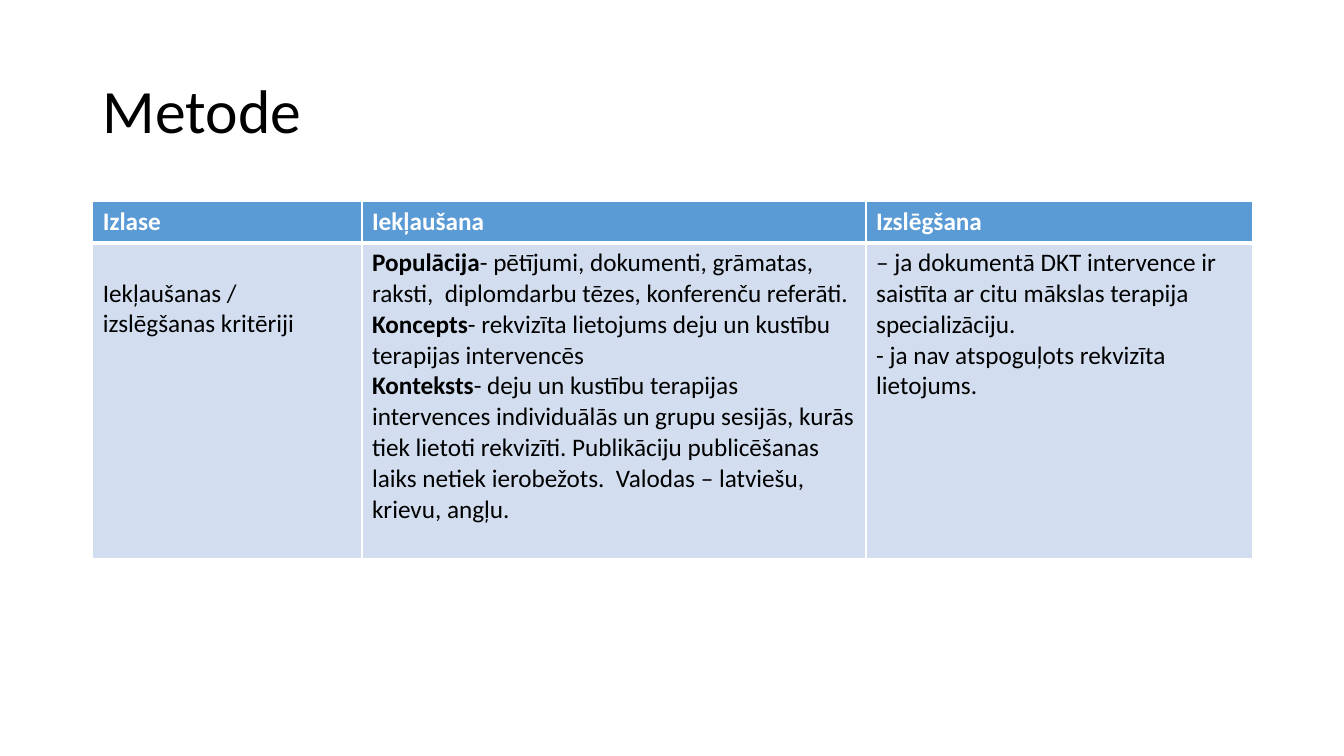
"""Build the "Metode" slide with its table of inclusion and exclusion criteria."""
from dataclasses import dataclass

from lxml.etree import SubElement
from pptx import Presentation
from pptx.dml.color import RGBColor
from pptx.enum.text import MSO_ANCHOR as Anchor, PP_ALIGN as Align
from pptx.oxml.ns import qn
from pptx.util import Inches, Pt

BLACK = RGBColor(0x00, 0x00, 0x00)
WHITE = RGBColor(0xFF, 0xFF, 0xFF)
HEADER_BLUE = RGBColor(0x5B, 0x9B, 0xD5)
BODY_BLUE = RGBColor(0xD2, 0xDE, 0xEF)

TITLE_FORMAT = {"name": "Calibri", "size": Pt(44), "bold": False}
TABLE_FORMAT = {"name": "Calibri", "size": Pt(18)}
TITLE_PLACE = {"left": Inches(0.92), "top": Inches(0.4),
               "width": Inches(11.5), "height": Inches(1.45)}
COLUMN_WIDTHS = (2.67, 5, 3.83)


@dataclass(frozen=True)
class Line:
    """One paragraph with an optional bold lead."""
    text: str
    lead: str = ""


@dataclass(frozen=True)
class RowStyle:
    """Look of one table row, with lengths in inches and borders in points."""
    height: float
    fill: RGBColor
    color: RGBColor
    bold: bool
    borders: dict[str, float]


@dataclass(frozen=True)
class CellText:
    """Paragraphs of one cell and the gap above them in inches."""
    lines: tuple[Line, ...]
    top_margin: float = 0.05


HEADER = RowStyle(0.41, HEADER_BLUE, WHITE, True, {"L": 1, "R": 1, "T": 1, "B": 3})
BODY = RowStyle(3.13, BODY_BLUE, BLACK, False, {"L": 1, "R": 1, "T": 3, "B": 1})

HEADER_CELLS = tuple(CellText((Line(name),)) for name in ("Izlase", "Iekļaušana", "Izslēgšana"))
BODY_CELLS = (
    CellText((Line("Iekļaušanas / izslēgšanas kritēriji"),), 0.35),
    CellText((
        Line("- pētījumi, dokumenti, grāmatas, raksti,  diplomdarbu tēzes, "
             "konferenču referāti.", "Populācija"),
        Line("- rekvizīta lietojums deju un kustību terapijas intervencēs", "Koncepts"),
        Line("- deju un kustību terapijas intervences individuālās un grupu sesijās, "
             "kurās tiek lietoti rekvizīti. Publikāciju publicēšanas laiks netiek "
             "ierobežots.  Valodas – latviešu, krievu, angļu.", "Konteksts"),
    )),
    CellText((
        Line("– ja dokumentā DKT intervence ir saistīta ar citu mākslas terapija "
             "specializāciju."),
        Line("- ja nav atspoguļots rekvizīta lietojums."),
    )),
)
TABLE_ROWS = ((HEADER, HEADER_CELLS), (BODY, BODY_CELLS))


def apply_format(target, values: dict) -> None:
    for name, value in values.items():
        setattr(target, name, value)


def add_run(paragraph, text: str, color: RGBColor, values: dict) -> None:
    run = paragraph.add_run()
    run.text = text
    apply_format(run.font, values)
    run.font.color.rgb = color


def add_borders(cell, borders: dict[str, float]) -> None:
    properties = cell._tc.get_or_add_tcPr()
    for side, width in borders.items():
        border = SubElement(properties, qn(f"a:ln{side}"), w=str(Pt(width)))
        fill = SubElement(border, qn("a:solidFill"))
        SubElement(fill, qn("a:srgbClr"), val=str(WHITE))


def fill_cell(cell, content: CellText, style: RowStyle) -> None:
    add_borders(cell, style.borders)
    cell.fill.solid()
    cell.fill.fore_color.rgb = style.fill
    cell.margin_top = Inches(content.top_margin)
    frame = cell.text_frame
    for index, line in enumerate(content.lines):
        paragraph = frame.add_paragraph() if index else frame.paragraphs[0]
        if line.lead:
            add_run(paragraph, line.lead, style.color, TABLE_FORMAT | {"bold": True})
        add_run(paragraph, line.text, style.color, TABLE_FORMAT | {"bold": style.bold})


def add_title(slide, text: str) -> None:
    title = slide.shapes.title
    apply_format(title, TITLE_PLACE)
    title.text_frame.vertical_anchor = Anchor.MIDDLE
    paragraph = title.text_frame.paragraphs[0]
    apply_format(paragraph, {"alignment": Align.LEFT, "line_spacing": 0.9})
    add_run(paragraph, text, BLACK, TITLE_FORMAT)


def add_criteria_table(slide) -> None:
    height = sum(style.height for style, _ in TABLE_ROWS)
    table = slide.shapes.add_table(
        len(TABLE_ROWS), len(COLUMN_WIDTHS), Inches(0.92), Inches(2),
        Inches(sum(COLUMN_WIDTHS)), Inches(height)).table
    for column, width in zip(table.columns, COLUMN_WIDTHS):
        column.width = Inches(width)
    for row, (style, contents) in zip(table.rows, TABLE_ROWS):
        row.height = Inches(style.height)
        for cell, content in zip(row.cells, contents):
            fill_cell(cell, content, style)


def main() -> None:
    presentation = Presentation()
    presentation.slide_width = Inches(13.33)
    presentation.slide_height = Inches(7.5)
    slide = presentation.slides.add_slide(presentation.slide_layouts[5])
    add_title(slide, "Metode")
    add_criteria_table(slide)
    presentation.save("out.pptx")


if __name__ == "__main__":
    main()
